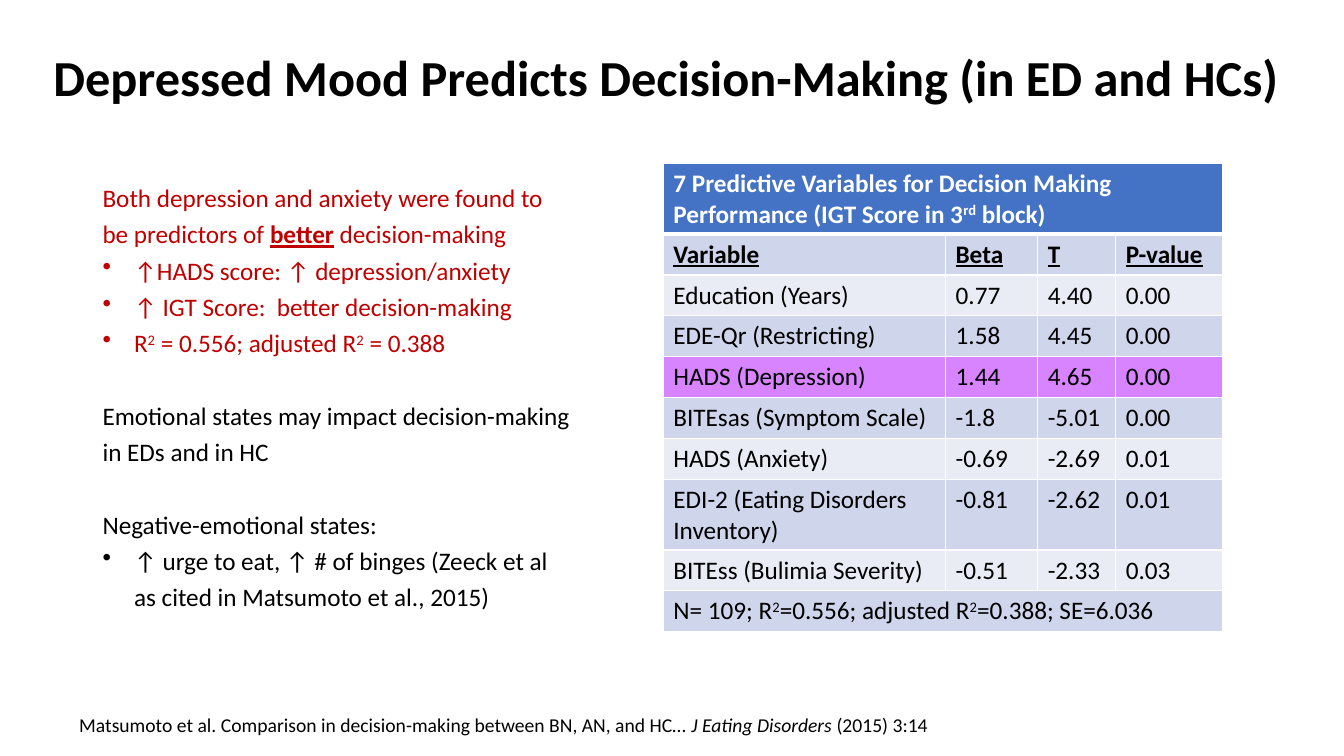
from pptx import Presentation
from pptx.dml.color import RGBColor
from pptx.enum.text import MSO_ANCHOR as Anchor, PP_ALIGN as Align
from pptx.oxml import parse_xml
from pptx.oxml.ns import nsdecls
from pptx.util import Pt

BLACK = RGBColor(0x00, 0x00, 0x00)
WHITE = RGBColor(0xFF, 0xFF, 0xFF)
RED = RGBColor(0xC0, 0x00, 0x00)
BLUE = RGBColor(0x44, 0x72, 0xC4)
DARK = RGBColor(0xCF, 0xD5, 0xEA)
LIGHT = RGBColor(0xE9, 0xEB, 0xF5)
PINK = RGBColor(0xD8, 0x83, 0xFF)


def write(par, text, size=18, color=BLACK, bold=False, under=False,
          mark="sup", align=None, space=None, before=0, bullet=False):
    """Fill a paragraph; parts between bars take the mark style."""
    par.alignment = align
    if space:
        par.line_spacing = space
    if before:
        par.space_before = Pt(before)
    if bullet:
        props = par._p.get_or_add_pPr()
        props.set("marL", str(Pt(22.5)))
        props.set("indent", str(-Pt(22.5)))
        props.append(parse_xml(f'<a:buChar {nsdecls("a")} char="•"/>'))
    for i, part in enumerate(text.split("|")):
        run = par.add_run()
        run.text = part
        font = run.font
        font.name, font.size, font.bold = "Calibri", Pt(size), bold
        font.underline = under
        font.color.rgb = color
        if i % 2 and mark == "sup":
            font._element.set("baseline", "30000")
        elif i % 2 and mark == "italic":
            font.italic = True
        elif i % 2 and mark == "strong":
            font.bold = font.underline = True


def add_box(left, top, width, height, wrap=True):
    box = slide.shapes.add_textbox(Pt(left), Pt(top), Pt(width), Pt(height))
    box.text_frame.word_wrap = wrap
    return box.text_frame


deck = Presentation()
deck.slide_width, deck.slide_height = Pt(960), Pt(540)
slide = deck.slides.add_slide(deck.slide_layouts[6])

# Citation
cite = add_box(46.8, 505.4, 625.7, 24.5, wrap=False)
write(cite.paragraphs[0], "Matsumoto et al. Comparison in decision-making between "
      "BN, AN, and HC… |J Eating Disorders |(2015) 3:14",
      size=14, mark="italic", align=Align.CENTER)

# Title
title = add_box(0, 5, 960, 104.4)
title.vertical_anchor = Anchor.MIDDLE
write(title.paragraphs[0], "Depressed Mood Predicts Decision-Making (in ED and HCs) ",
      size=36, bold=True, align=Align.CENTER, space=0.9)

# Findings: text, colour, bullet, space before
points = [
    ("Both depression and anxiety were found to be predictors of "
     "|better| decision-making", RED, False, 0),
    ("↑HADS score: ↑ depression/anxiety", RED, True, 0),
    ("↑ IGT Score:  better decision-making", RED, True, 0),
    ("R|2| = 0.556; adjusted R|2| = 0.388", RED, True, 0),
    ("Emotional states may impact decision-making in EDs and in HC", BLACK, False, 26),
    ("Negative-emotional states:", BLACK, False, 26),
    ("↑ urge to eat, ↑ # of binges (Zeeck et al as cited in "
     "Matsumoto et al., 2015)", BLACK, True, 0),
]
body = add_box(66.2, 122.4, 350.6, 347.8)
for i, (text, color, bullet, before) in enumerate(points):
    par = body.add_paragraph() if i else body.paragraphs[0]
    write(par, text, color=color, bullet=bullet, before=before, space=1.2,
          mark="sup" if bullet else "strong")

# Table of predictors
rows = [
    ("7 Predictive Variables for Decision Making Performance "
     "(IGT Score in 3|rd| block)",),
    ("Variable", "Beta", "T", "P-value"),
    ("Education (Years)", "0.77", "4.40", "0.00"),
    ("EDE-Qr (Restricting)", "1.58", "4.45", "0.00"),
    ("HADS (Depression)", "1.44", "4.65", "0.00"),
    ("BITEsas (Symptom Scale)", "-1.8", "-5.01", "0.00"),
    ("HADS (Anxiety)", "-0.69", "-2.69", "0.01"),
    ("EDI-2 (Eating Disorders Inventory)", "-0.81", "-2.62", "0.01"),
    ("BITEss (Bulimia Severity)", "-0.51", "-2.33", "0.03"),
    ("N= 109; R|2|=0.556; adjusted R|2|=0.388; SE=6.036",),
]
widths = [201.6, 65.8, 55.8, 76.2]
high = 29.2
table = slide.shapes.add_table(len(rows), len(widths), Pt(473.8), Pt(116.8),
                               Pt(sum(widths)), Pt(high * len(rows))).table
for col, width in zip(table.columns, widths):
    col.width = Pt(width)

fills = {0: BLUE, 4: PINK}
for r, row in enumerate(rows):
    table.rows[r].height = Pt(high)
    if len(row) == 1:
        table.cell(r, 0).merge(table.cell(r, len(widths) - 1))
    for c in range(len(widths)):
        cell = table.cell(r, c)
        # White rules, thicker under the heading
        for side in "LRTB":
            thick = 3 if (r, side) in [(0, "B"), (1, "T")] else 1
            cell._tc.get_or_add_tcPr().append(parse_xml(
                f'<a:ln{side} {nsdecls("a")} w="{Pt(thick)}"><a:solidFill>'
                f'<a:srgbClr val="{WHITE}"/></a:solidFill></a:ln{side}>'))
        cell.fill.solid()
        cell.fill.fore_color.rgb = fills.get(r, DARK if r % 2 else LIGHT)
        if c < len(row):
            write(cell.text_frame.paragraphs[0], row[c], bold=r < 2,
                  under=r == 1, color=BLACK if r else WHITE)

deck.save("out.pptx")
